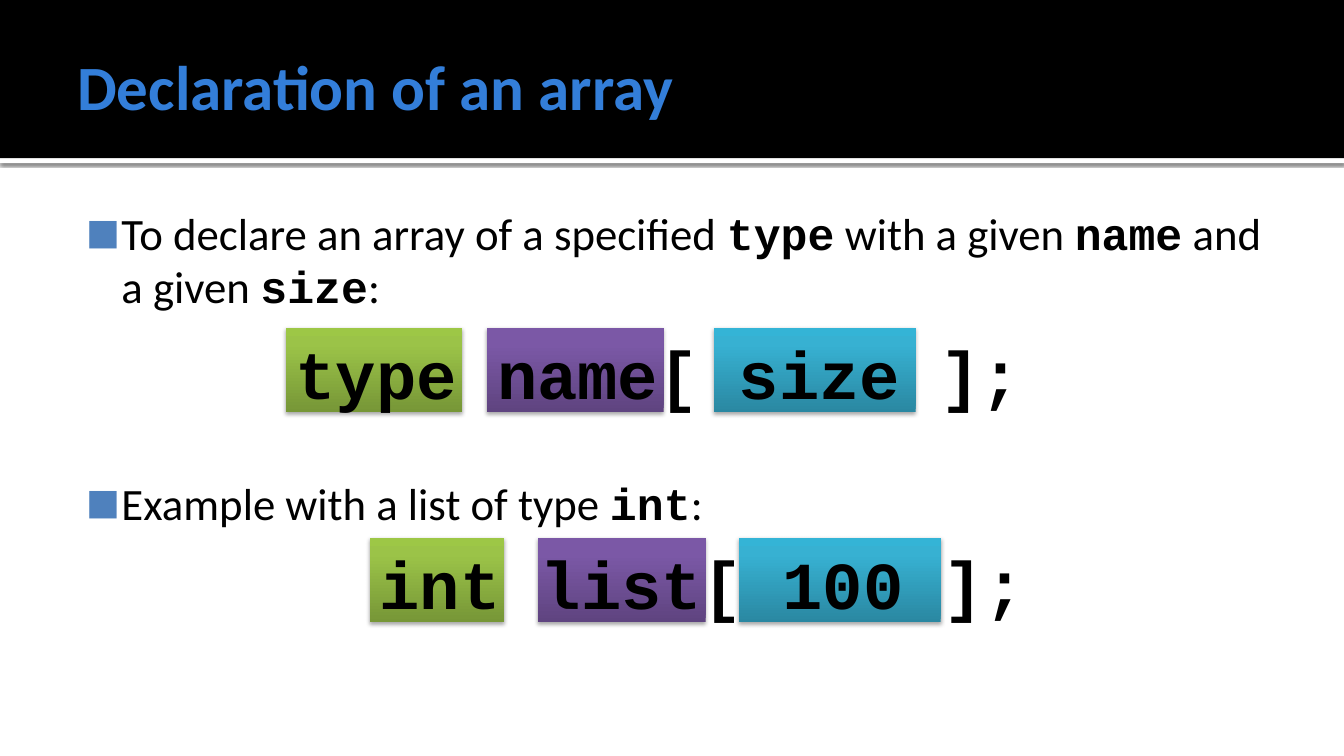
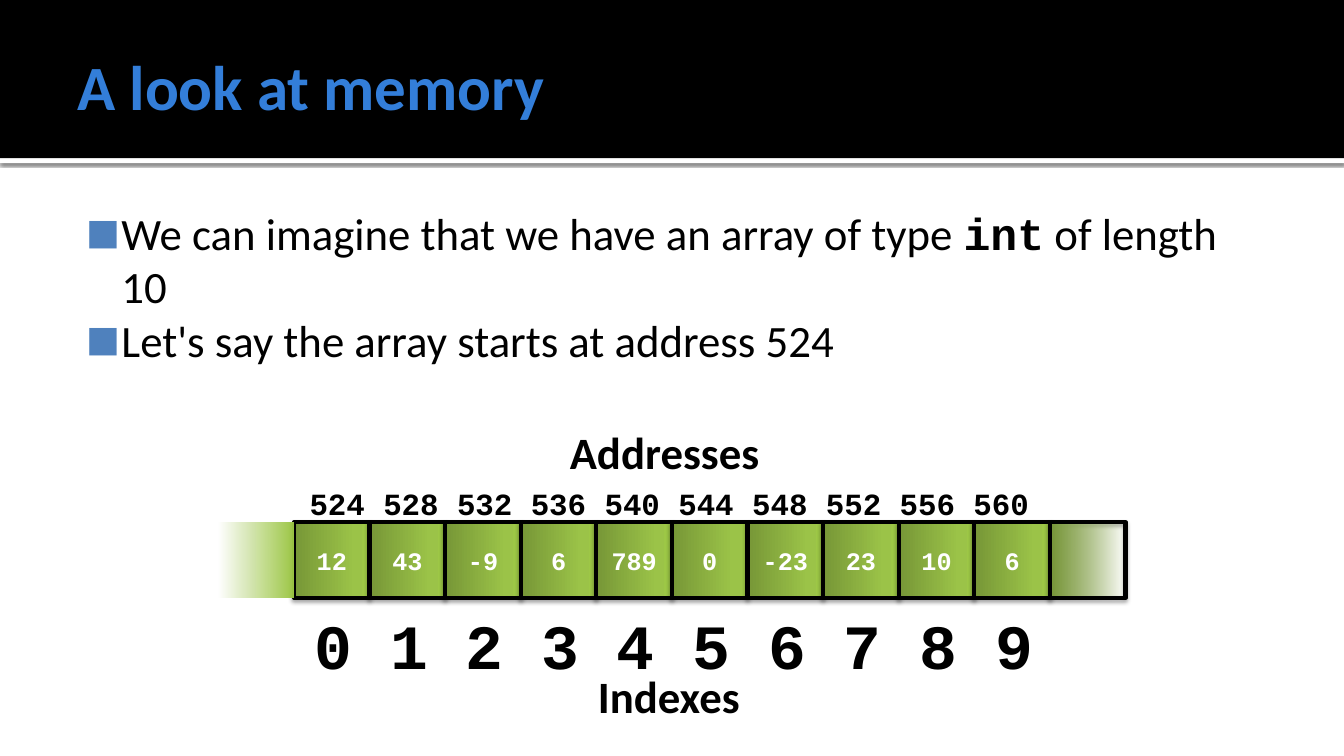
from lxml.etree import SubElement
from pptx import Presentation
from pptx.dml.color import RGBColor
from pptx.enum.shapes import MSO_SHAPE
from pptx.enum.text import MSO_ANCHOR, PP_ALIGN
from pptx.oxml import parse_xml
from pptx.oxml.ns import nsdecls, qn
from pptx.util import Pt

COLORS = {
    "black": "000000",
    "white": "FFFFFF",
    "title": "337ED9",
    "bullet": "4F81BD",
}
GRADIENTS = {
    "green": [(0, "779737", 100), (80, "9BC348", 100), (100, "9DC746", 100)],
    "purple": [(0, "5F4480", 100), (80, "7B58A6", 100), (100, "7C57A8", 100)],
    "teal": [(0, "2A88A2", 100), (80, "37B1D2", 100), (100, "34B4D6", 100)],
    "fade in": [(0, "9BC348", 0), (100, "9DC746", 100)],
    "fade out": [(0, "779737", 100), (100, "9DC746", 0)],
}
BODY_FONT = "Calibri"
CODE_FONT = "Courier New"


def write(para, text, size=32, font=BODY_FONT, color="black", bold=False):
    span = para.add_run()
    span.text = text
    span.font.size = Pt(size)
    span.font.name = font
    span.font.bold = bold
    span.font.color.rgb = RGBColor.from_string(COLORS[color])


class Lecture:
    def __init__(self):
        self.deck = Presentation()
        self.deck.slide_width = Pt(960)
        self.deck.slide_height = Pt(540)
        self.page = None

    def start_page(self, title):
        self.page = self.deck.slides.add_slide(self.deck.slide_layouts[5])
        strip = self.rectangle(0, 113, 960, 3.6, color="white")
        self.shadow(strip, opacity=60, blur=2.5, distance=0.8)
        self.rectangle(0, 0, 960, 113, color="black")
        heading = self.page.shapes.title
        self.page.shapes._spTree.append(heading._element)
        heading.left, heading.top = Pt(48), Pt(12)
        heading.width, heading.height = Pt(864), Pt(98.6)
        frame = heading.text_frame
        frame.vertical_anchor = MSO_ANCHOR.MIDDLE
        frame.margin_right = Pt(3.6)
        para = frame.paragraphs[0]
        para.alignment = PP_ALIGN.LEFT
        write(para, title, size=45, color="title", bold=True)

    def rectangle(self, left, top, width, height, color=None):
        box = self.page.shapes.add_shape(
            MSO_SHAPE.RECTANGLE, Pt(left), Pt(top), Pt(width), Pt(height))
        box.shadow.inherit = False
        box.line.fill.background()
        if color:
            box.fill.solid()
            box.fill.fore_color.rgb = RGBColor.from_string(COLORS[color])
        return box

    def shadow(self, box, opacity=35, blur=3.1, distance=1.8):
        effects = box._element.spPr.find(qn("a:effectLst"))
        outer = SubElement(effects, qn("a:outerShdw"), blurRad=str(Pt(blur)),
                           dist=str(Pt(distance)), dir="5400000", rotWithShape="0")
        tint = SubElement(outer, qn("a:srgbClr"), val=COLORS["black"])
        SubElement(tint, qn("a:alpha"), val=str(opacity * 1000))

    def gradient_box(self, left, top, width, height, gradient, angle=270, shaded=True):
        box = self.rectangle(left, top, width, height)
        stops = "".join(
            f'<a:gs pos="{place * 1000}"><a:srgbClr val="{color}">'
            f'<a:alpha val="{opacity * 1000}"/></a:srgbClr></a:gs>'
            for place, color, opacity in GRADIENTS[gradient])
        fill = parse_xml(
            f'<a:gradFill {nsdecls("a")}><a:gsLst>{stops}</a:gsLst>'
            f'<a:lin ang="{angle * 60000}" scaled="0"/></a:gradFill>')
        box._element.spPr.insert(2, fill)
        if shaded:
            self.shadow(box)
        return box

    def memory_cell(self, left, top, side, value="", gradient="green", outlined=True):
        box = self.gradient_box(left, top, side, side, gradient, angle=0, shaded=outlined)
        if outlined:
            box.line.color.rgb = RGBColor.from_string(COLORS["black"])
            box.line.width = Pt(3)
        if value:
            box.text_frame.vertical_anchor = MSO_ANCHOR.MIDDLE
            para = box.text_frame.paragraphs[0]
            para.alignment = PP_ALIGN.CENTER
            write(para, value, size=18, font=CODE_FONT, color="white", bold=True)

    def text_box(self, left, top, width, height):
        box = self.page.shapes.add_textbox(Pt(left), Pt(top), Pt(width), Pt(height))
        box.text_frame.word_wrap = True
        return box.text_frame

    def label(self, left, top, width, height, text, **style):
        frame = self.text_box(left, top, width, height)
        write(frame.paragraphs[0], text, bold=True, **style)

    def bullets(self, items):
        frame = self.text_box(48, 139.5, 864, 364.5)
        frame.margin_left = Pt(4.3)
        frame.margin_top = frame.margin_right = Pt(7.2)
        for index, (text, space_before) in enumerate(items):
            para = frame.add_paragraph() if index else frame.paragraphs[0]
            para.space_before = Pt(space_before)
            properties = para._p.get_or_add_pPr()
            properties.set("marL", str(Pt(34.5)))
            properties.set("indent", str(Pt(-25.2)))
            tint = SubElement(properties, qn("a:buClr"))
            SubElement(tint, qn("a:srgbClr"), val=COLORS["bullet"])
            SubElement(properties, qn("a:buSzPct"), val="80000")
            SubElement(properties, qn("a:buFont"), typeface=BODY_FONT)
            SubElement(properties, qn("a:buChar"), char="■")
            for part, words in enumerate(text.split("`")):
                is_code = part % 2 == 1
                write(para, words, font=CODE_FONT if is_code else BODY_FONT, bold=is_code)

    def declaration(self, top, code, width, parts):
        for gradient, (left, part_width) in zip(("green", "purple", "teal"), parts):
            self.gradient_box(left, top, part_width, 60, gradient)
        self.label(parts[0][0], top, width, 65.5, code, size=48, font=CODE_FONT)


def declaration_page(lecture):
    lecture.start_page("Declaration of an array")
    lecture.bullets([
        ("To declare an array of a specified `type` with a given `name` and a given `size`:", 0),
        ("Example with a list of type `int`:", 116),
    ])
    lecture.declaration(234, "type name[ size ];", 576, [(204, 126), (348, 126), (510, 144)])
    lecture.declaration(384, "int list[ 100 ];", 516, [(264, 96), (384, 120), (528, 144)])


def memory_page(lecture):
    lecture.start_page("A look at memory")
    lecture.bullets([
        ("We can imagine that we have an array of type `int` of length 10", 0),
        ("Let's say the array starts at address 524", 0),
    ])
    values = [12, 43, -9, 6, 789, 0, -23, 23, 10, 6]
    left, top, side = 210, 373, 54
    for index, value in enumerate(values):
        lecture.memory_cell(left + index * side, top, side, str(value))
    lecture.memory_cell(left - side, top, side, gradient="fade in", outlined=False)
    lecture.memory_cell(left + len(values) * side, top, side, gradient="fade out")
    indexes = " ".join(str(index) for index in range(len(values)))
    addresses = " ".join(str(524 + 4 * index) for index in range(len(values)))
    lecture.label(217.5, 429.5, 544, 58, indexes, size=45, font=CODE_FONT)
    lecture.label(214, 343, 536, 34, addresses, size=22, font=CODE_FONT)
    lecture.label(400, 300, 158, 46, "Addresses")
    lecture.label(420, 474, 122, 46, "Indexes")


def main():
    lecture = Lecture()
    declaration_page(lecture)
    memory_page(lecture)
    lecture.deck.save("out.pptx")


if __name__ == "__main__":
    main()
